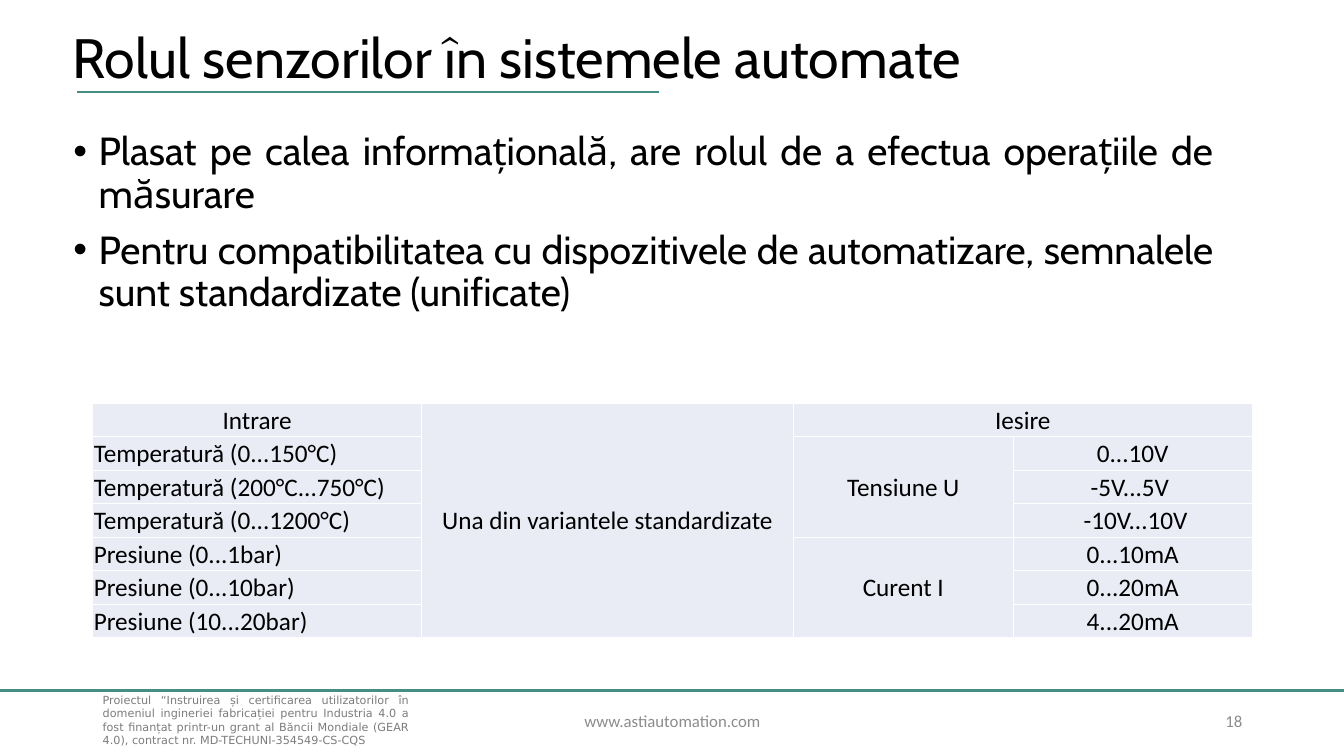
from lxml import etree
from pptx import Presentation
from pptx.dml.color import RGBColor
from pptx.enum.shapes import MSO_CONNECTOR
from pptx.enum.text import MSO_ANCHOR, PP_ALIGN
from pptx.oxml.ns import qn
from pptx.util import Pt

EMU_PER_PX = 9144
LEFT, CENTER = PP_ALIGN.LEFT, PP_ALIGN.CENTER
RIGHT, JUSTIFY = PP_ALIGN.RIGHT, PP_ALIGN.JUSTIFY
TOP, MIDDLE = MSO_ANCHOR.TOP, MSO_ANCHOR.MIDDLE
STRAIGHT = MSO_CONNECTOR.STRAIGHT

BLACK, WHITE, GREEN = "000000", "FFFFFF", "468D85"
CELL_FILL, NOTE_GRAY, FOOTER_GRAY = "E9EBF5", "7C7C7C", "8C8C8C"

TITLE = "Rolul senzorilor în sistemele automate"
BULLETS = [
    "Plasat pe calea informațională, are rolul de a efectua operațiile de măsurare",
    "Pentru compatibilitatea cu dispozitivele de automatizare, semnalele sunt "
    "standardizate (unificate)",
]
PROJECT_NOTE = (
    "Proiectul “Instruirea și certificarea utilizatorilor în domeniul ingineriei "
    "fabricației pentru Industria 4.0 a fost finanțat printr-un grant al Băncii "
    "Mondiale (GEAR 4.0), contract nr. MD-TECHUNI-354549-CS-CQS"
)
COLUMN_WIDTHS = [326, 369, 218, 237]
SIGNAL_ROWS = [
    ["Intrare", "Una din variantele standardizate", "Iesire", ""],
    ["Temperatură (0...150°C)", "", "Tensiune U", "0...10V"],
    ["Temperatură (200°C...750°C)", "", "", "-5V...5V "],
    ["Temperatură (0...1200°C)", "", "", " -10V...10V"],
    ["Presiune (0...1bar)", "", "Curent I", "0...10mA"],
    ["Presiune (0...10bar)", "", "", "0...20mA"],
    ["Presiune (10...20bar)", "", "", "4...20mA"],
]
MERGES = [((0, 1), (6, 1)), ((0, 2), (0, 3)), ((1, 2), (3, 2)), ((4, 2), (6, 2))]


def emu(px):
    """Turn a length in px into EMU."""
    return px * EMU_PER_PX


def color(hex_string):
    """Turn a hex string into a colour."""
    return RGBColor.from_string(hex_string)


def add_bullet(paragraph, indent):
    """Give a paragraph a hanging round bullet."""
    properties = paragraph._p.get_or_add_pPr()
    properties.set("marL", str(emu(indent)))
    properties.set("indent", str(-emu(indent)))
    font = etree.SubElement(properties, qn("a:buFont"))
    font.set("typeface", "Arial")
    bullet = etree.SubElement(properties, qn("a:buChar"))
    bullet.set("char", "•")


def write_text(frame, lines, size=18, font="Calibri", fill=BLACK, align=LEFT,
               spacing=None, gap=0, indent=0):
    """Write formatted paragraphs into a text frame."""
    for index, line in enumerate(lines):
        paragraph = frame.add_paragraph() if index else frame.paragraphs[0]
        paragraph.alignment = align
        if spacing:
            paragraph.line_spacing = spacing
        if index and gap:
            paragraph.space_before = Pt(gap)
        if indent:
            add_bullet(paragraph, indent)
        run = paragraph.add_run()
        run.text = line
        run.font.size = Pt(size)
        run.font.name = font
        run.font.color.rgb = color(fill)


def add_text(slide, box, lines, anchor=TOP, **text_format):
    """Add a wrapping text box."""
    frame = slide.shapes.add_textbox(*map(emu, box)).text_frame
    frame.word_wrap = True
    frame.vertical_anchor = anchor
    write_text(frame, lines, **text_format)


def add_rule(slide, left, top, width):
    """Add a horizontal green rule."""
    rule = slide.shapes.add_connector(
        STRAIGHT, emu(left), emu(top), emu(left + width), emu(top))
    rule.line.color.rgb = color(GREEN)
    rule.line.width = Pt(1.5)
    etree.SubElement(rule._element.spPr, qn("a:effectLst"))


def add_borders(cell):
    """Draw thin white borders on all sides of a cell."""
    properties = cell._tc.get_or_add_tcPr()
    for position, side in enumerate(("a:lnL", "a:lnR", "a:lnT", "a:lnB")):
        border = etree.Element(qn(side), w=str(Pt(1)))
        solid = etree.SubElement(border, qn("a:solidFill"))
        etree.SubElement(solid, qn("a:srgbClr"), val=WHITE)
        properties.insert(position, border)


def add_header(slide, box):
    """Place the title and its underline."""
    left, top, width, height = box
    add_text(slide, box, [TITLE], anchor=MIDDLE, size=39.6, font="Cabin", spacing=0.9)
    add_rule(slide, left + 14, top + 72, 578)


def add_body(slide, box):
    """Place the bulleted statements."""
    add_text(slide, box, BULLETS, size=28, font="Cabin", align=JUSTIFY,
             spacing=0.9, gap=10, indent=25)


def add_signal_table(slide, box):
    """Place the table of input and output signals."""
    frame = slide.shapes.add_table(len(SIGNAL_ROWS), len(COLUMN_WIDTHS), *map(emu, box))
    table = frame.table
    table.first_row = table.horz_banding = False
    for column, width in zip(table.columns, COLUMN_WIDTHS):
        column.width = emu(width)
    for row_index, (row, texts) in enumerate(zip(table.rows, SIGNAL_ROWS)):
        row.height = emu(box[3]) // len(SIGNAL_ROWS)
        for column_index, text in enumerate(texts):
            cell = row.cells[column_index]
            cell.fill.solid()
            cell.fill.fore_color.rgb = color(CELL_FILL)
            cell.vertical_anchor = MIDDLE
            cell.margin_left = cell.margin_right = cell.margin_top = emu(1)
            cell.margin_bottom = 0
            add_borders(cell)
            if text:
                is_input = column_index == 0 and row_index > 0
                write_text(cell.text_frame, [text], align=LEFT if is_input else CENTER)
    for first, last in MERGES:
        table.cell(*first).merge(table.cell(*last))


def add_footer(slide, box):
    """Place the footer rule, project note, site address and slide number."""
    left, top, width, height = box
    add_rule(slide, left, top + 2, width)
    add_text(slide, (left + 92, top, 324, 64), [PROJECT_NOTE], size=8,
             font="DejaVu Sans", fill=NOTE_GRAY, align=JUSTIFY)
    for offset, span, text, align in ((442, 450, "www.astiautomation.com", CENTER),
                                      (942, 300, "18", RIGHT)):
        add_text(slide, (left + offset, top + 12, span, 40), [text], anchor=MIDDLE,
                 size=12, fill=FOOTER_GRAY, align=align)


def main():
    """Build and save the presentation."""
    presentation = Presentation()
    presentation.slide_width, presentation.slide_height = emu(1333), emu(750)
    slide = presentation.slides.add_slide(presentation.slide_layouts[6])
    add_footer(slide, (0, 683, 1333, 67))
    add_header(slide, (62, 19, 972, 82))
    add_body(slide, (63, 126, 1150, 550))
    add_signal_table(slide, (92, 400, 1150, 233))
    presentation.save("out.pptx")


if __name__ == "__main__":
    main()
